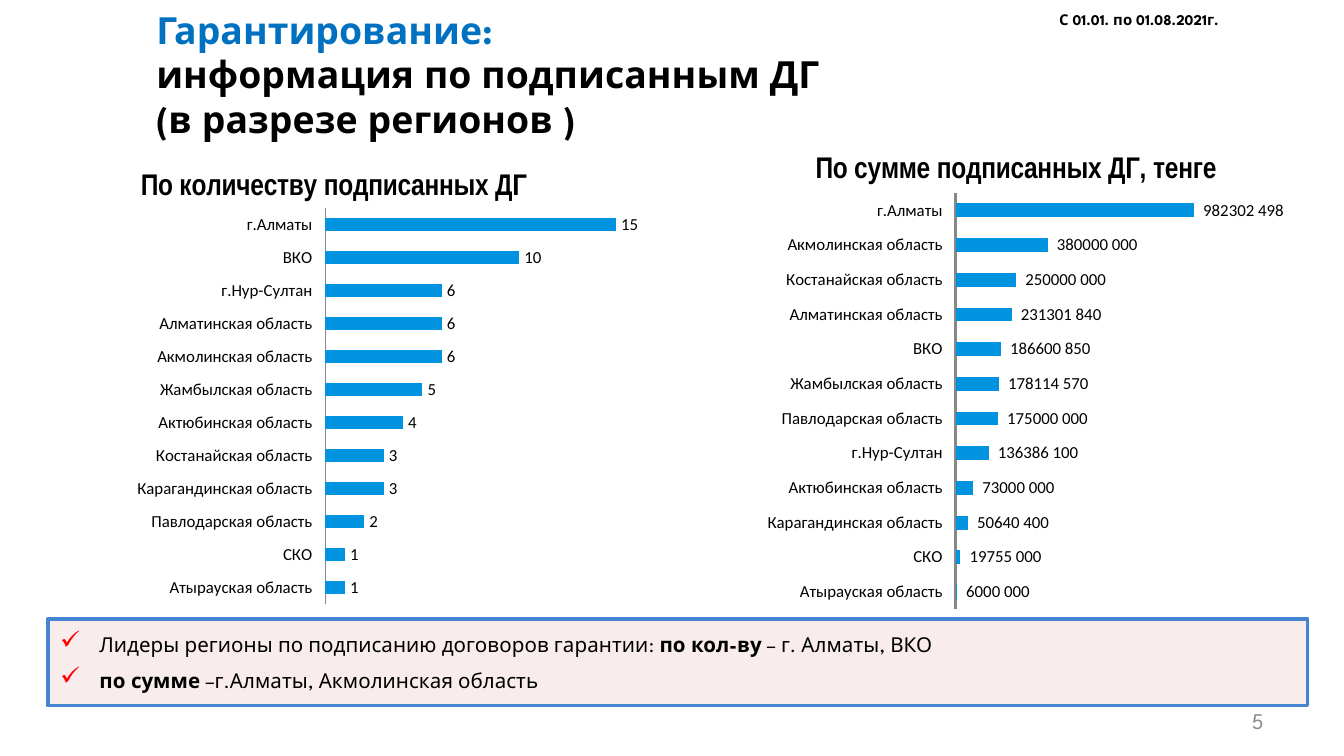
"""Build the slide on signed guarantee agreements by region."""
from dataclasses import dataclass

from lxml.etree import SubElement
from pptx import Presentation
from pptx.chart.data import CategoryChartData
from pptx.dml.color import RGBColor
from pptx.enum.chart import XL_CHART_TYPE as ChartType, XL_LABEL_POSITION as LabelPosition
from pptx.enum.chart import XL_TICK_LABEL_POSITION as TickLabels, XL_TICK_MARK as TickMark
from pptx.enum.shapes import MSO_SHAPE as Shape
from pptx.enum.text import MSO_ANCHOR as Anchor, MSO_AUTO_SIZE as AutoSize, PP_ALIGN as Align
from pptx.oxml import parse_xml
from pptx.oxml.ns import nsdecls, qn
from pptx.util import Pt


@dataclass(frozen=True)
class Theme:
    font: str = "League Spartan"
    chart_font: str = "Calibri"
    chart_title_font: str = "Arial Narrow"
    black: str = "000000"
    blue: str = "0070C0"
    bar: str = "0293E0"
    axis: str = "878787"
    grey: str = "8C8C8C"
    red: str = "FF0000"
    panel: str = "F2DCDB"
    border: str = "4584D3"
    title: int = 20
    chart_title: int = 16
    number: int = 12
    body: int = 11
    label: int = 9
    date: int = 8


theme = Theme()
PX = 9525


def px(*values):
    return [value * PX for value in values]


def add_text(para, text, size=theme.body, color=theme.black, bold=False, font=theme.font):
    span = para.add_run()
    span.text = text
    span.font.name = font
    span.font.size = Pt(size)
    span.font.bold = bold
    span.font.color.rgb = RGBColor.from_string(color)


deck = Presentation()
deck.slide_width, deck.slide_height = px(960, 540)
page = deck.slides.add_slide(deck.slide_layouts[5])

title = page.shapes.title
title.left, title.top, title.width, title.height = px(102, 0, 673, 85)
frame = title.text_frame
frame.auto_size = AutoSize.NONE
frame.vertical_anchor = Anchor.TOP
para = frame.paragraphs[0]
add_text(para, "Гарантирование:", size=theme.title, color=theme.blue, bold=True)
para.add_line_break()
add_text(para, "информация по подписанным ДГ", size=theme.title, bold=True)
add_text(frame.add_paragraph(), "(в разрезе регионов )", size=theme.title, bold=True)
for para in frame.paragraphs:
    para.alignment = Align.LEFT

panel = page.shapes.add_shape(Shape.RECTANGLE, *px(34, 442, 900, 62))
panel.shadow.inherit = False
panel.fill.solid()
panel.fill.fore_color.rgb = RGBColor.from_string(theme.panel)
tint = panel.fill._xPr.find(qn("a:solidFill"))[0]
SubElement(tint, qn("a:alpha"), val="50000")
panel.line.color.rgb = RGBColor.from_string(theme.border)
panel.line.width = Pt(2)
frame = panel.text_frame
frame.word_wrap = True
frame.vertical_anchor = Anchor.MIDDLE
frame.margin_left, frame.margin_top, frame.margin_right, frame.margin_bottom = px(8, 4, 8, 4)

leaders = [
    [("Лидеры регионы по подписанию договоров гарантии: ", False), ("по кол-ву", True),
     (" – г. Алматы, ВКО", False)],
    [("по сумме ", True), ("–г.Алматы, Акмолинская область", False)],
]
for index, parts in enumerate(leaders):
    para = frame.paragraphs[0] if index == 0 else frame.add_paragraph()
    para.alignment = Align.LEFT
    para.space_after = Pt(6)
    props = para._p.get_or_add_pPr()
    indent, hanging = px(29, -28)
    props.set("marL", str(indent))
    props.set("indent", str(hanging))
    SubElement(SubElement(props, qn("a:buClr")), qn("a:srgbClr"), val=theme.red)
    SubElement(props, qn("a:buSzPct"), val="125000")
    SubElement(props, qn("a:buChar"), char="✓")
    for text, bold in parts:
        add_text(para, text, bold=bold)

date_box = page.shapes.add_textbox(*px(747, 3, 142, 23))
date_box.text_frame.word_wrap = False
add_text(date_box.text_frame.paragraphs[0], "С 01.01. по 01.08.2021г.", size=theme.date, bold=True)

number_box = page.shapes.add_textbox(*px(688, 500, 224, 29))
number_box.text_frame.word_wrap = True
number_box.text_frame.vertical_anchor = Anchor.MIDDLE
para = number_box.text_frame.paragraphs[0]
para.alignment = Align.RIGHT
add_text(para, "5", size=theme.number, color=theme.grey)

counts = {
    "Атырауская область": 1, "СКО": 1, "Павлодарская область": 2,
    "Карагандинская область": 3, "Костанайская область": 3, "Актюбинская область": 4,
    "Жамбылская область": 5, "Акмолинская область": 6, "Алматинская область": 6,
    "г.Нур-Султан": 6, "ВКО": 10, "г.Алматы": 15,
}
sums = {
    "Атырауская область": 6000000, "СКО": 19755000, "Карагандинская область": 50640400,
    "Актюбинская область": 73000000, "г.Нур-Султан": 136386100,
    "Павлодарская область": 175000000, "Жамбылская область": 178114570, "ВКО": 186600850,
    "Алматинская область": 231301840, "Костанайская область": 250000000,
    "Акмолинская область": 380000000, "г.Алматы": 982302498,
}
charts = [
    ("По количеству подписанных ДГ", counts, (-19, 105, 503, 337), 16, "General", 0.75,
     {"x": 0.23, "y": 0.04}, {"x": 0.5, "y": 0.13, "w": 0.44, "h": 0.84}),
    ("По сумме подписанных ДГ, тенге", sums, (484, 92, 473, 354), 1200000000,
     r"_-* #\ ##0_р_._-", 1.5,
     {"x": 0.2, "y": 0.04}, {"x": 0.42, "y": 0.13, "w": 0.44, "h": 0.84}),
]
for heading, regions, place, top_value, number_format, axis_width, title_spot, plot_spot in charts:
    data = CategoryChartData()
    data.categories = list(regions)
    data.add_series(heading, list(regions.values()))
    chart = page.shapes.add_chart(ChartType.BAR_CLUSTERED, *px(*place), data).chart
    chart.has_legend = False
    chart.font.name = theme.chart_font
    chart.font.size = Pt(theme.label)
    chart.font.color.rgb = RGBColor.from_string(theme.black)
    chart.has_title = True
    add_text(chart.chart_title.text_frame.paragraphs[0], heading, size=theme.chart_title,
             bold=True, font=theme.chart_title_font)

    chart.value_axis.visible = False
    chart.value_axis.has_major_gridlines = False
    chart.value_axis.minimum_scale = 0
    chart.value_axis.maximum_scale = top_value
    axis = chart.category_axis
    axis.major_tick_mark = TickMark.NONE
    axis.tick_label_position = TickLabels.LOW
    axis.format.line.color.rgb = RGBColor.from_string(theme.axis)
    axis.format.line.width = Pt(axis_width)

    plot = chart.plots[0]
    plot.gap_width = 150
    plot.vary_by_categories = False
    fill = plot.series[0].format.fill
    fill.solid()
    fill.fore_color.rgb = RGBColor.from_string(theme.bar)
    plot.has_data_labels = True
    labels = plot.data_labels
    labels.show_value = True
    labels.position = LabelPosition.OUTSIDE_END
    labels.number_format = number_format
    labels.number_format_is_linked = False
    labels.font.name = theme.chart_font
    labels.font.size = Pt(theme.label)
    labels.font.color.rgb = RGBColor.from_string(theme.black)

    heading_node = chart.chart_title._element
    plot_node = chart._chartSpace.chart.plotArea
    for node, slot, target, spot in ((heading_node, 1, "", title_spot),
                                     (plot_node, 0, '<c:layoutTarget val="inner"/>', plot_spot)):
        for old in node.findall(qn("c:layout")):
            node.remove(old)
        modes = '<c:xMode val="edge"/><c:yMode val="edge"/>'
        sizes = "".join(f'<c:{key} val="{value}"/>' for key, value in spot.items())
        node.insert(slot, parse_xml(f'<c:layout {nsdecls("c")}><c:manualLayout>'
                                    f'{target}{modes}{sizes}</c:manualLayout></c:layout>'))

deck.save("out.pptx")
